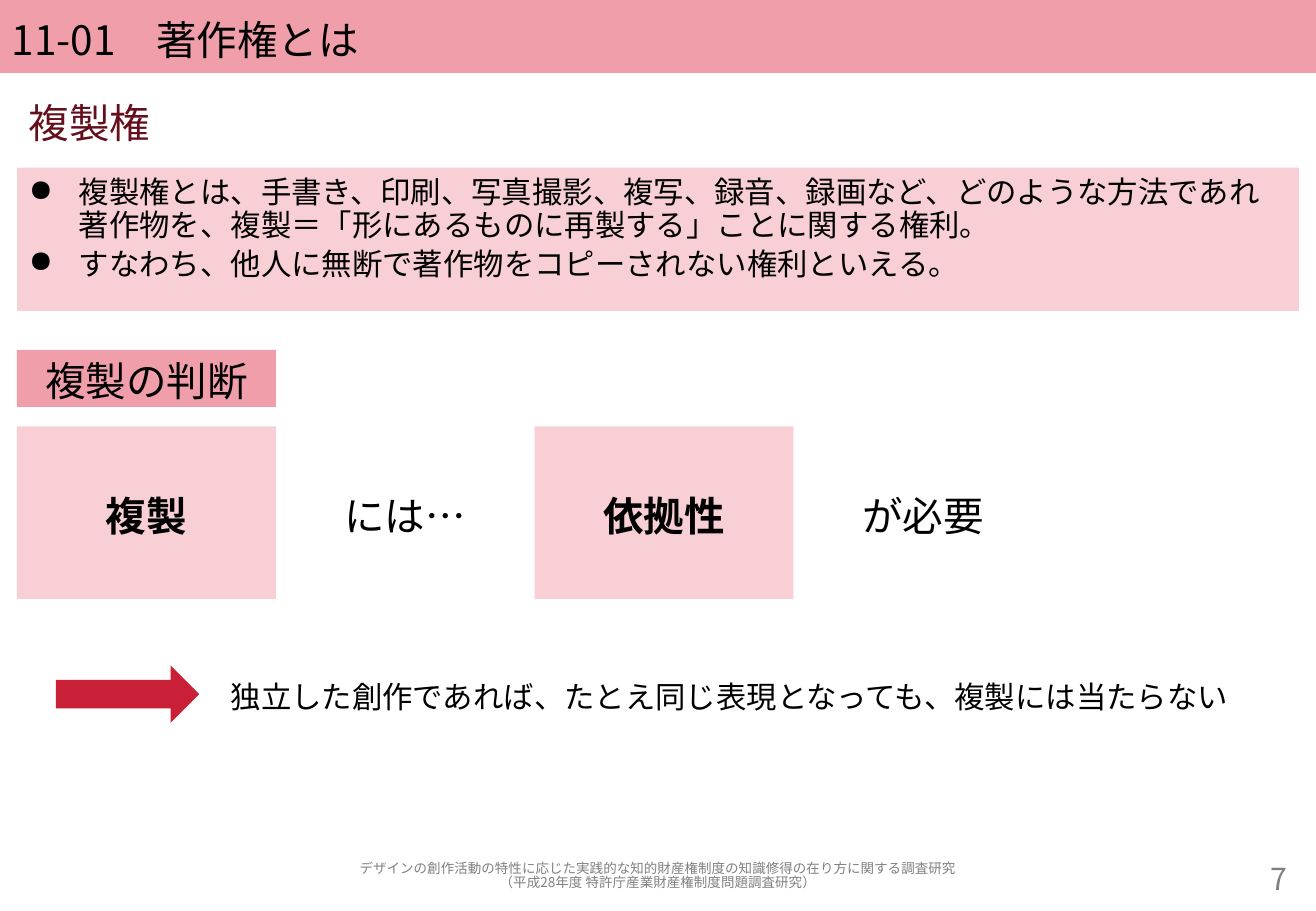
from pptx import Presentation
from pptx.dml.color import RGBColor
from pptx.enum.lang import MSO_LANGUAGE_ID
from pptx.enum.shapes import MSO_SHAPE
from pptx.enum.text import MSO_ANCHOR, PP_ALIGN
from pptx.oxml.ns import qn
from pptx.util import Inches, Pt
from lxml.etree import SubElement

FONT = "Noto Sans CJK JP"
BLACK = RGBColor(0x00, 0x00, 0x00)
GRAY = RGBColor(0x80, 0x80, 0x80)
MAROON = RGBColor(0x64, 0x10, 0x1C)
RED = RGBColor(0xC9, 0x1F, 0x37)
ROSE = RGBColor(0xF0, 0x9F, 0xAA)
PALE_ROSE = RGBColor(0xF8, 0xCF, 0xD5)

MARGIN = 0.14
CONTENT_WIDTH = 10.55
CELL_WIDTH = 2.13

deck = Presentation()
deck.slide_width = Inches(10.83)
deck.slide_height = Inches(7.5)
page = deck.slides.add_slide(deck.slide_layouts[6])


def add_text(lines, left, top, width, height, *, size=24, color=BLACK, fill=None,
             bold=False, align=PP_ALIGN.LEFT, anchor=MSO_ANCHOR.MIDDLE,
             spacing=1.1, inset_top=0.05, bullet=None):
    """Add a text block, one paragraph per line, with an optional fill."""
    area = [Inches(length) for length in (left, top, width, height)]
    if fill is None:
        box = page.shapes.add_textbox(*area)
    else:
        box = page.shapes.add_shape(MSO_SHAPE.RECTANGLE, *area)
        box.shadow.inherit = False
        box.fill.solid()
        box.fill.fore_color.rgb = fill
        box.line.fill.background()
    frame = box.text_frame
    frame.word_wrap = True
    frame.vertical_anchor = anchor
    frame.margin_top = Inches(inset_top)
    for index, line in enumerate(lines.split("\n")):
        para = frame.add_paragraph() if index else frame.paragraphs[0]
        para.alignment = align
        para.line_spacing = spacing
        if bullet:
            para.space_before = Pt(3.6 if index else 0)
            properties = para._p.get_or_add_pPr()
            properties.set("marL", str(Inches(0.41)))
            properties.set("indent", str(Inches(-0.41)))
            SubElement(properties, qn("a:buChar")).set("char", bullet)
        span = para.add_run()
        span.text = line
        span.font.name = FONT
        span.font.size = Pt(size)
        span.font.bold = bold
        span.font.color.rgb = color
        span.font.language_id = MSO_LANGUAGE_ID.JAPANESE
        SubElement(span._r.get_or_add_rPr(), qn("a:ea")).set("typeface", FONT)


# Title bar and section heading
add_text("11-01　著作権とは", 0, 0, 10.83, 0.6, fill=ROSE)
add_text("複製権", MARGIN, 0.76, CONTENT_WIDTH, 0.47, color=MAROON,
         anchor=MSO_ANCHOR.TOP, spacing=1.0)

# Definition
add_text("複製権とは、手書き、印刷、写真撮影、複写、録音、録画など、どのような方法であれ"
         "著作物を、複製＝「形にあるものに再製する」ことに関する権利。\n"
         "すなわち、他人に無断で著作物をコピーされない権利といえる。",
         MARGIN, 1.38, CONTENT_WIDTH, 1.18, size=18, fill=PALE_ROSE,
         anchor=MSO_ANCHOR.TOP, spacing=0.9, inset_top=0.08, bullet="●")

# Requirement row: filled keywords alternate with plain words
add_text("複製の判断", MARGIN, 2.88, CELL_WIDTH, 0.47, fill=ROSE, align=PP_ALIGN.CENTER)
for column, word in enumerate(["複製", "には…", "依拠性", "が必要"]):
    keyword = column % 2 == 0
    add_text(word, MARGIN + column * CELL_WIDTH, 3.51, CELL_WIDTH, 1.42,
             fill=PALE_ROSE if keyword else None, bold=keyword, align=PP_ALIGN.CENTER)

# Conclusion
arrow = page.shapes.add_shape(MSO_SHAPE.RIGHT_ARROW, Inches(0.46), Inches(5.48),
                              Inches(1.18), Inches(0.47))
arrow.shadow.inherit = False
arrow.fill.solid()
arrow.fill.fore_color.rgb = RED
arrow.line.fill.background()
add_text("独立した創作であれば、たとえ同じ表現となっても、複製には当たらない",
         1.8, 5.32, 8.9, 0.79, size=18)

# Footer and page number
add_text("デザインの創作活動の特性に応じた実践的な知的財産権制度の知識修得の在り方に関する調査研究\n"
         "（平成28年度 特許庁産業財産権制度問題調査研究）",
         MARGIN, 7.06, CONTENT_WIDTH, 0.31, size=8, color=GRAY,
         align=PP_ALIGN.CENTER, spacing=0.9)
add_text("7", 9.35, 7.06, 1.34, 0.31, size=18, color=GRAY, align=PP_ALIGN.RIGHT)

deck.save("out.pptx")
